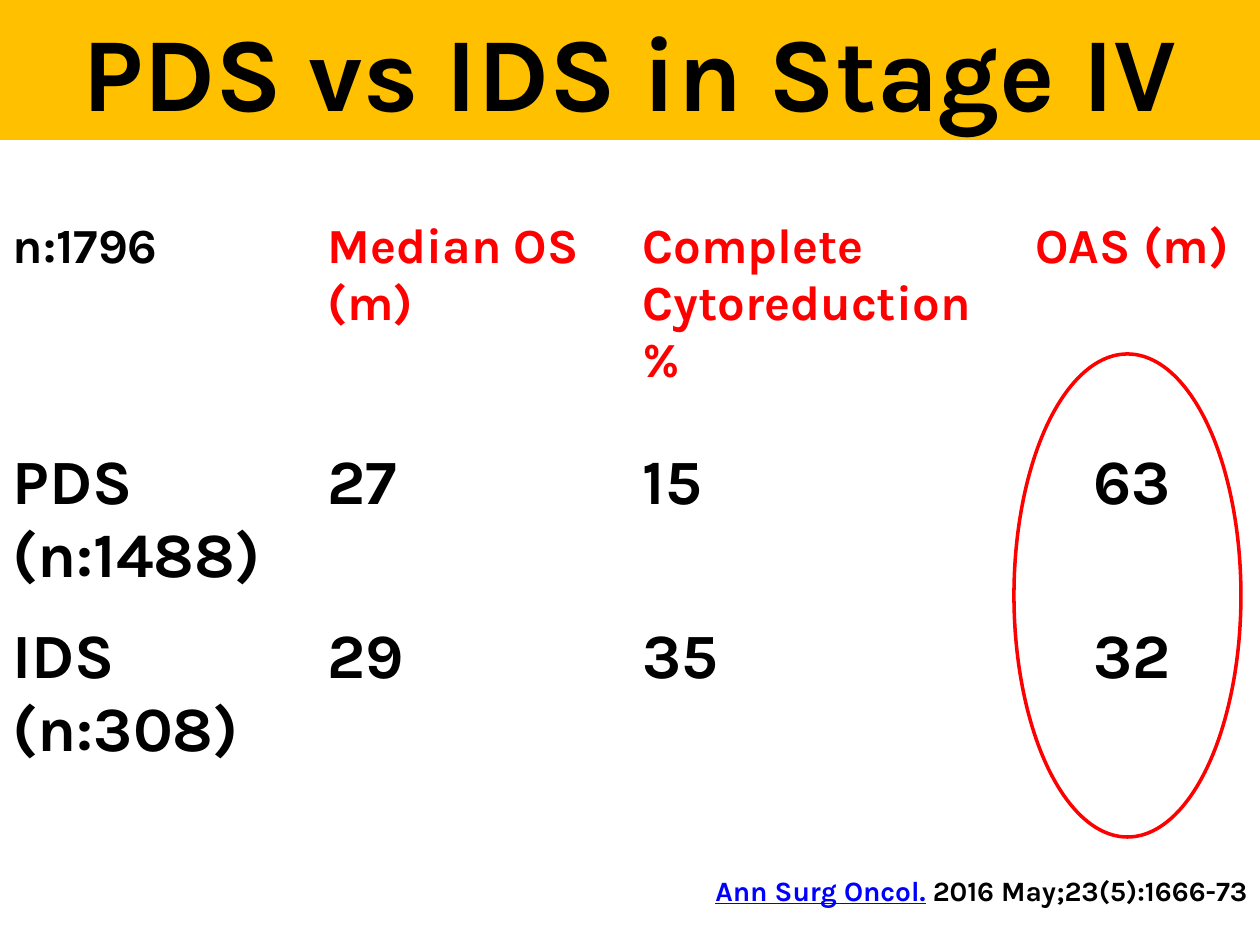
from pptx import Presentation
from pptx.dml.color import RGBColor
from pptx.enum.shapes import MSO_SHAPE
from pptx.enum.text import MSO_ANCHOR, PP_ALIGN
from pptx.util import Pt

EMU_PER_PX = 914400 / 126
FONT = "Karla"
COLORS = {
    "amber": "FFC000",
    "black": "000000",
    "white": "FFFFFF",
    "red": "FF0000",
    "link": "0000FF",
}


def px(n):
    return round(n * EMU_PER_PX)


def rgb(name):
    return RGBColor.from_string(COLORS[name])


def add_text(p, text, size=36, color="black", underline=False, align=PP_ALIGN.LEFT):
    p.alignment = align
    r = p.add_run()
    r.text = text
    r.font.name = FONT
    r.font.size = Pt(size)
    r.font.bold = True
    r.font.underline = underline
    r.font.color.rgb = rgb(color)


class SlideBuilder:
    def __init__(self, slide):
        self.s = slide

    def shape(self, kind, box, fill=None, line=None, width=2):
        sp = self.s.shapes.add_shape(kind, *map(px, box))
        sp.shadow.inherit = False
        if fill:
            sp.fill.solid()
            sp.fill.fore_color.rgb = rgb(fill)
        else:
            sp.fill.background()
        if line:
            sp.line.color.rgb = rgb(line)
            sp.line.width = Pt(width)
        else:
            sp.line.fill.background()
        return sp

    def banner(self, box, text):
        tf = self.shape(MSO_SHAPE.RECTANGLE, box, fill="amber").text_frame
        tf.word_wrap = True
        tf.vertical_anchor = MSO_ANCHOR.MIDDLE
        add_text(tf.paragraphs[0], text, size=60, align=PP_ALIGN.CENTER)

    def table(self, left, top, widths, heights, rows):
        frame = self.s.shapes.add_table(
            len(rows), len(widths), px(left), px(top), px(sum(widths)), px(sum(heights)))
        table = frame.table
        for col, width in zip(table.columns, widths):
            col.width = px(width)
        for row, height in zip(table.rows, heights):
            row.height = px(height)
        last = len(widths) - 1
        for i, row in enumerate(rows):
            for j, text in enumerate(row):
                cell = table.cell(i, j)
                cell.fill.solid()
                cell.fill.fore_color.rgb = rgb("white")
                add_text(cell.text_frame.paragraphs[0], text,
                         size=28 if i == 0 else 36,
                         color="red" if i == 0 and j > 0 else "black",
                         align=PP_ALIGN.CENTER if j == last else PP_ALIGN.LEFT)

    def citation(self, box, journal, details):
        tf = self.s.shapes.add_textbox(*map(px, box)).text_frame
        tf.word_wrap = True
        p = tf.paragraphs[0]
        add_text(p, journal, size=16, color="link", underline=True, align=PP_ALIGN.RIGHT)
        add_text(p, details, size=16, align=PP_ALIGN.RIGHT)


def main():
    prs = Presentation()
    prs.slide_width, prs.slide_height = px(1260), px(945)
    slide = SlideBuilder(prs.slides.add_slide(prs.slide_layouts[6]))

    # Title
    slide.banner((0, 0, 1260, 140), "PDS vs IDS in Stage IV")

    # Survival table
    slide.table(0, 212, (315, 315, 374, 256), (228, 174, 174), [
        ("n:1796", "Median OS (m)", "Complete Cytoreduction %", "OAS (m)"),
        ("PDS (n:1488)", "27", "15", "63"),
        ("IDS (n:308)", "29", "35", "32"),
    ])

    # Source
    slide.citation((601, 867, 659, 47), "Ann Surg Oncol.", " 2016 May;23(5):1666-73")

    # Ring around the OAS values
    slide.shape(MSO_SHAPE.OVAL, (1014, 354, 227, 483), line="red")

    prs.save("out.pptx")


if __name__ == "__main__":
    main()
